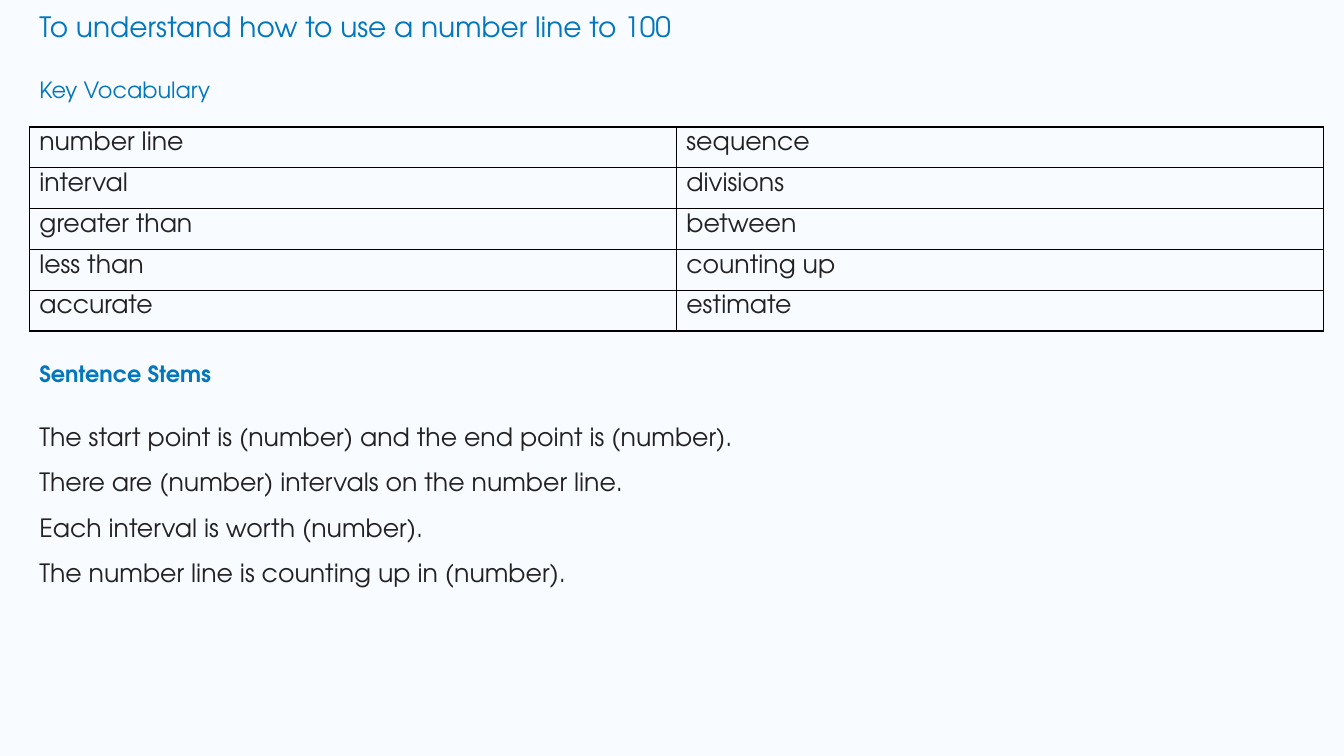
from pptx import Presentation
from pptx.dml.color import RGBColor
from pptx.enum.text import MSO_ANCHOR as Anchor, MSO_AUTO_SIZE as AutoSize, PP_ALIGN as Align
from pptx.oxml import parse_xml
from pptx.oxml.ns import nsdecls
from pptx.util import Pt

BLUE = RGBColor(0x02, 0x77, 0xBD)
DARK = RGBColor(0x22, 0x22, 0x22)
PAPER = RGBColor(0xF8, 0xFB, 0xFF)
BLACK = RGBColor(0, 0, 0)
FONT = "TeX Gyre Adventor"
LEFT = 20.9

TITLE = {"size": Pt(20), "bold": False, "color": BLUE}
LABEL = {"size": Pt(16), "bold": False, "color": BLUE}
STEMS_LABEL = LABEL | {"bold": True}
BODY = {"size": Pt(18), "bold": False, "color": DARK}

VOCABULARY = [
    ("number line", "sequence"),
    ("interval", "divisions"),
    ("greater than", "between"),
    ("less than", "counting up"),
    ("accurate", "estimate"),
]
STEMS = [
    "The start point is (number) and the end point is (number).",
    "There are (number) intervals on the number line.",
    "Each interval is worth (number).",
    "The number line is counting up in (number).",
]


def format_font(font, fmt):
    font.name = FONT
    for name, value in fmt.items():
        if name == "color":
            font.color.rgb = value
        else:
            setattr(font, name, value)


def fill_placeholder(sp, box, lines, fmt, spacing=1.0):
    for name, value in zip(("left", "top", "width", "height"), box):
        setattr(sp, name, Pt(value))
    tf = sp.text_frame
    frame = {
        "margin_left": Pt(7.2), "margin_right": Pt(7.2),
        "margin_top": Pt(3.6), "margin_bottom": Pt(3.6),
        "vertical_anchor": Anchor.TOP, "word_wrap": True, "auto_size": AutoSize.NONE,
    }
    for name, value in frame.items():
        setattr(tf, name, value)
    tf.text = "\n".join(lines)
    for p in tf.paragraphs:
        pPr = p._p.get_or_add_pPr()
        pPr.set("marL", "0")
        pPr.set("indent", "0")
        pPr.append(parse_xml(f"<a:buNone {nsdecls('a')}/>"))
        p.alignment = Align.LEFT
        p.space_before = Pt(0)
        p.line_spacing = spacing
        format_font(p.runs[0].font, fmt)


def add_borders(cell):
    tcPr = cell._tc.get_or_add_tcPr()
    for i, side in enumerate(("lnL", "lnR", "lnT", "lnB")):
        tcPr.insert(i, parse_xml(
            f'<a:{side} {nsdecls("a")} w="{Pt(1)}"><a:solidFill>'
            f'<a:srgbClr val="{BLACK}"/></a:solidFill></a:{side}>'))


def add_vocabulary(slide, top, width, row_height):
    rows, cols = len(VOCABULARY), len(VOCABULARY[0])
    table = slide.shapes.add_table(
        rows, cols, Pt(LEFT), Pt(top), Pt(width), Pt(row_height * rows)).table
    table.first_row = table.horz_banding = False
    for row, words in zip(table.rows, VOCABULARY):
        row.height = Pt(row_height)
        for cell, word in zip(row.cells, words):
            cell.text = word
            cell.fill.background()
            add_borders(cell)
            format_font(cell.text_frame.paragraphs[0].runs[0].font, BODY)


def main():
    prs = Presentation()
    prs.slide_width, prs.slide_height = Pt(960), Pt(540)
    slide = prs.slides.add_slide(prs.slide_layouts.get_by_name("Comparison"))
    slide.background.fill.solid()
    slide.background.fill.fore_color.rgb = PAPER

    title, vocabulary_label, stems, stems_label, spare = list(slide.placeholders)[:5]
    fill_placeholder(title, (LEFT, 2.9, 888.5, 31.7),
                     ["To understand how to use a number line to 100"], TITLE)
    fill_placeholder(vocabulary_label, (LEFT, 51.1, 213.8, 33.1), ["Key Vocabulary"], LABEL)
    fill_placeholder(stems_label, (LEFT, 253.4, 213.8, 33.1), ["Sentence Stems"], STEMS_LABEL)
    fill_placeholder(stems, (LEFT, 286.6, 923.8, 170.6), STEMS, BODY, 1.5)
    spare.element.getparent().remove(spare.element)
    add_vocabulary(slide, 90.7, 924.4, 29.15)

    prs.save("out.pptx")


if __name__ == "__main__":
    main()
